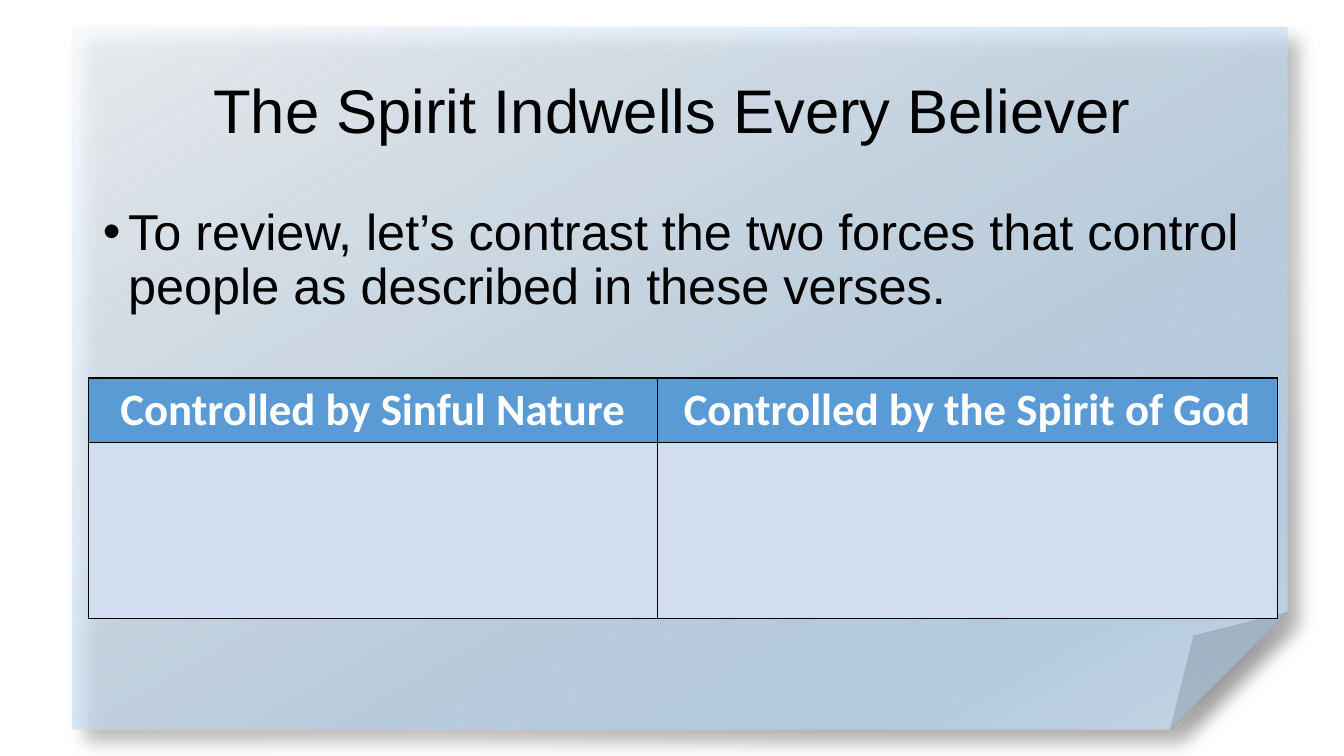
from lxml import etree
from pptx import Presentation
from pptx.dml.color import RGBColor
from pptx.enum.shapes import MSO_SHAPE
from pptx.enum.text import MSO_ANCHOR, MSO_AUTO_SIZE, PP_ALIGN
from pptx.oxml import parse_xml
from pptx.oxml.ns import qn
from pptx.util import Inches, Pt

FOLDED_CORNER = MSO_SHAPE.FOLDED_CORNER
TOP, MIDDLE = MSO_ANCHOR.TOP, MSO_ANCHOR.MIDDLE
LEFT, CENTER = PP_ALIGN.LEFT, PP_ALIGN.CENTER
NO_AUTOFIT = MSO_AUTO_SIZE.NONE
NS = 'xmlns:a="http://schemas.openxmlformats.org/drawingml/2006/main"'
BLACK, WHITE = "000000", "FFFFFF"
HEADER_BLUE, CELL_BLUE = "5B9BD5", "D2DEEF"
PAPER_STOPS = [(0, "F7FAFD", 80), (64, "B5D2EC", 63), (83, "B5D2EC", 79), (100, "CEE1F2", 77)]


def color(hex_code):
    return RGBColor.from_string(hex_code)


def write(frame, text, *, size, font="Arial", fill=BLACK, bold=False,
          align=LEFT, spacing=1.0, bullet=None):
    frame.text = text
    paragraph = frame.paragraphs[0]
    paragraph.alignment = align
    paragraph.line_spacing = spacing
    paragraph.space_before = Pt(0)
    if bullet:
        props = paragraph._p.get_or_add_pPr()
        props.set("marL", str(Inches(0.25)))
        props.set("indent", str(-Inches(0.25)))
        etree.SubElement(props, qn("a:buFont"), typeface="Arial")
        etree.SubElement(props, qn("a:buChar"), char=bullet)
    run_font = paragraph.runs[0].font
    run_font.name, run_font.size, run_font.bold = font, Pt(size), bold
    run_font.color.rgb = color(fill)


prs = Presentation()
prs.slide_width, prs.slide_height = Inches(13.33), Inches(7.5)
slide = prs.slides.add_slide(prs.slide_layouts[1])
slide.background.fill.solid()
slide.background.fill.fore_color.rgb = color(WHITE)

# Translucent paper; its shadow shows through the gradient
paper = slide.shapes.add_shape(FOLDED_CORNER, Inches(0.72), Inches(0.27), Inches(12.05), Inches(6.97))
paper.line.fill.background()
stops = "".join(
    f'<a:gs pos="{pos * 1000}"><a:srgbClr val="{hex_code}"><a:alpha val="{alpha * 1000}"/></a:srgbClr></a:gs>'
    for pos, hex_code, alpha in PAPER_STOPS)
gradient = parse_xml(f'<a:gradFill {NS} rotWithShape="1"><a:gsLst>{stops}</a:gsLst>'
                     f'<a:lin ang="{60 * 60000}" scaled="0"/></a:gradFill>')
shadow = parse_xml(f'<a:effectLst {NS}><a:outerShdw blurRad="{Pt(13)}" dist="{Pt(13)}" dir="{45 * 60000}" '
                   f'algn="tl" rotWithShape="0"><a:srgbClr val="{BLACK}"><a:alpha val="40000"/></a:srgbClr>'
                   '</a:outerShdw></a:effectLst>')
paper_props = paper._element.spPr
paper_props.find(qn("a:prstGeom")).addnext(gradient)
paper_props.find(qn("a:ln")).addnext(shadow)
slide.shapes._spTree.insert(2, paper._element)

title, body = slide.shapes.title, slide.placeholders[1]
for holder, top, height, anchor in [(title, 0.4, 1.45, MIDDLE), (body, 2, 4.76, TOP)]:
    holder.left, holder.width = Inches(0.92), Inches(11.5)
    holder.top, holder.height = Inches(top), Inches(height)
    holder.text_frame.word_wrap = True
    holder.text_frame.auto_size = NO_AUTOFIT
    holder.text_frame.vertical_anchor = anchor
write(title.text_frame, "The Spirit Indwells Every Believer", size=44, align=CENTER, spacing=0.9)
write(body.text_frame, "To review, let’s contrast the two forces that control people as described in these verses.",
      size=36, spacing=0.9, bullet="•")

contrast = slide.shapes.add_table(2, 2, Inches(0.88), Inches(3.75), Inches(11.79), Inches(2.38)).table
for column, width in zip(contrast.columns, (5.64, 6.15)):
    column.width = Inches(width)
for row, height in zip(contrast.rows, (0.64, 1.74)):
    row.height = Inches(height)
for cell, heading in zip(contrast.rows[0].cells, ("Controlled by Sinful Nature", "Controlled by the Spirit of God")):
    write(cell.text_frame, heading, size=32, font="Calibri", fill=WHITE, bold=True, align=CENTER)
for row, row_fill in zip(contrast.rows, (HEADER_BLUE, CELL_BLUE)):
    for cell in row.cells:
        cell_props = cell._tc.get_or_add_tcPr()
        for side in ("lnL", "lnR", "lnT", "lnB"):
            cell_props.append(parse_xml(f'<a:{side} {NS} w="{Pt(1)}"><a:solidFill><a:srgbClr val="{BLACK}"/>'
                                        f'</a:solidFill></a:{side}>'))
        cell.fill.solid()
        cell.fill.fore_color.rgb = color(row_fill)

prs.save("out.pptx")
